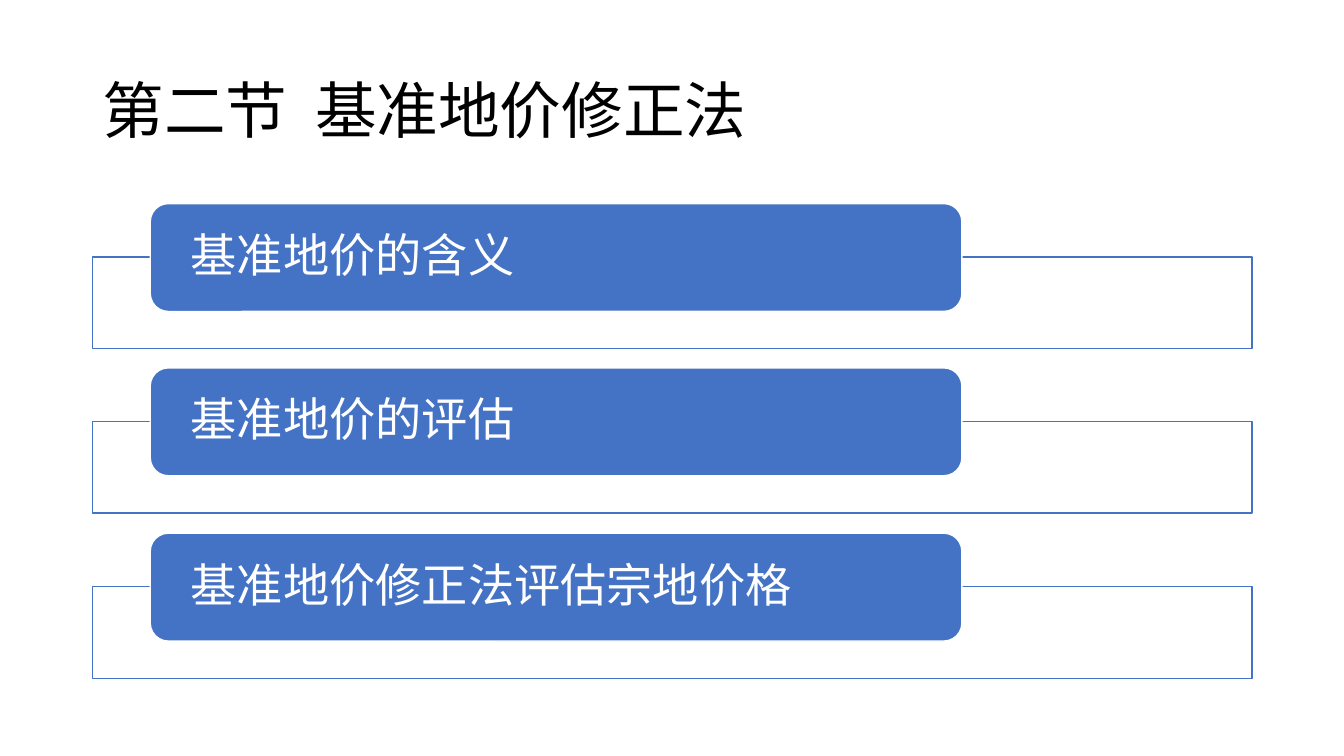
from lxml import etree
from pptx import Presentation
from pptx.dml.color import RGBColor
from pptx.enum.shapes import MSO_SHAPE
from pptx.enum.text import MSO_ANCHOR, PP_ALIGN
from pptx.oxml.ns import qn
from pptx.util import Pt

RECT = MSO_SHAPE.RECTANGLE
ROUND = MSO_SHAPE.ROUNDED_RECTANGLE
MIDDLE = MSO_ANCHOR.MIDDLE
LEFT = PP_ALIGN.LEFT
SCALE = 9144
FONT = "Noto Sans CJK SC"
COLORS = {"blue": "4472C4", "white": "FFFFFF", "black": "000000"}
TOPICS = ["基准地价的含义", "基准地价的评估", "基准地价修正法评估宗地价格"]


class Deck:
    """Draws styled elements on one slide, with lengths in px."""

    def __init__(self, width, height):
        self.show = Presentation()
        self.show.slide_width = width * SCALE
        self.show.slide_height = height * SCALE
        self.slide = self.show.slides.add_slide(self.show.slide_layouts[6])

    def color(self, name):
        return RGBColor.from_string(COLORS[name])

    def label(self, shape, text, size, color, inset, edge):
        frame = shape.text_frame
        frame.text = text
        frame.word_wrap = True
        frame.vertical_anchor = MIDDLE
        frame.margin_left = frame.margin_right = inset * SCALE
        frame.margin_top = frame.margin_bottom = edge * SCALE
        para = frame.paragraphs[0]
        para.alignment = LEFT
        para.line_spacing = 0.9
        font = para.runs[0].font
        font.size = Pt(size)
        font.name = FONT
        font.color.rgb = self.color(color)
        etree.SubElement(font._element, qn("a:ea")).set("typeface", FONT)

    def title(self, text, *box):
        shape = self.slide.shapes.add_textbox(*(n * SCALE for n in box))
        self.label(shape, text, 44, "black", 10, 5)

    def block(self, kind, fill, line, *box):
        shape = self.slide.shapes.add_shape(kind, *(n * SCALE for n in box))
        shape.shadow.inherit = False
        shape.fill.solid()
        shape.fill.fore_color.rgb = self.color(fill)
        shape.line.color.rgb = self.color(line)
        shape.line.width = Pt(1)
        return shape

    def panel(self, *box):
        shape = self.block(RECT, "white", "blue", *box)
        tint = shape._element.spPr.find(qn("a:solidFill"))[0]
        etree.SubElement(tint, qn("a:alpha")).set("val", "90000")

    def pill(self, text, *box):
        shape = self.block(ROUND, "blue", "white", *box)
        self.label(shape, text, 33, "white", 35, 5)


def main():
    deck = Deck(1333, 750)
    deck.title("第二节  基准地价修正法", 92, 40, 1150, 145)
    for row, topic in enumerate(TOPICS):
        top = 202 + row * 327 // 2
        deck.panel(92, top + 53, 1150, 91)
        deck.pill(topic, 149, top, 805, 107)
    deck.show.save("out.pptx")


if __name__ == "__main__":
    main()
